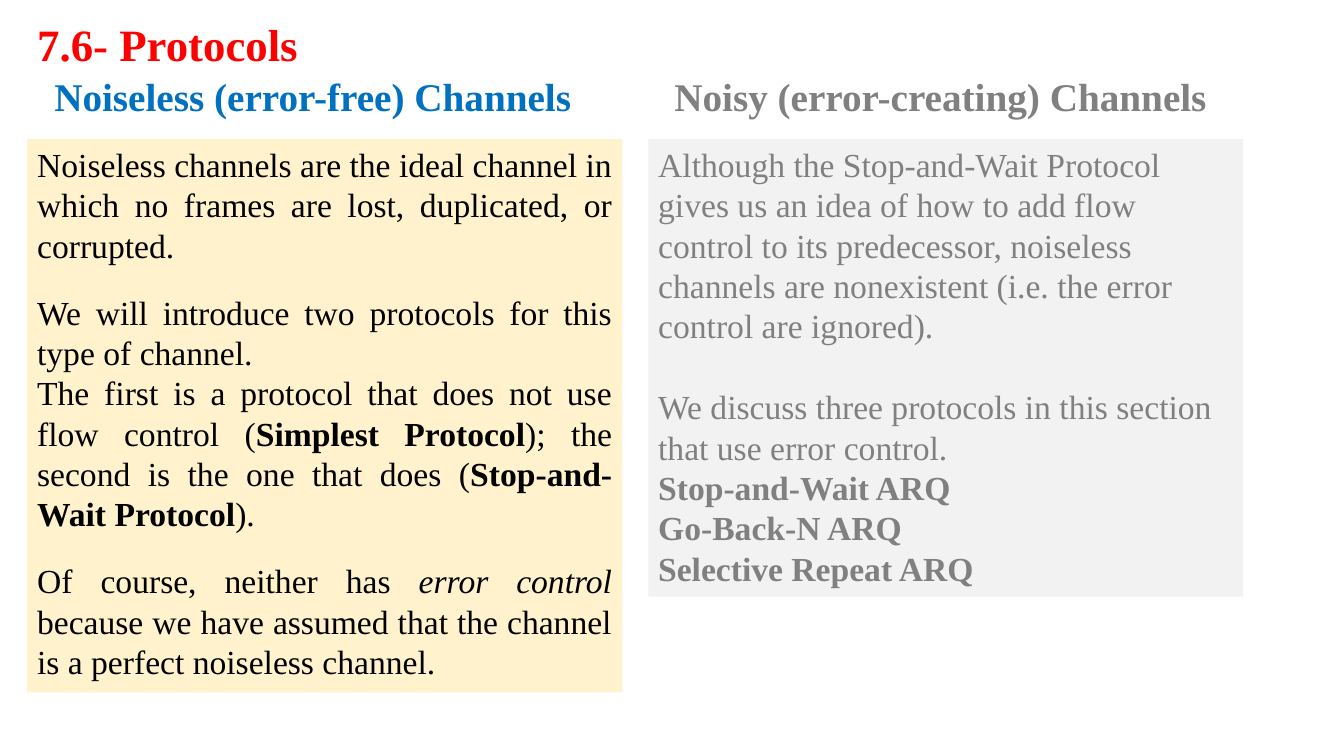
from dataclasses import dataclass

from pptx import Presentation
from pptx import util as u
from pptx.dml.color import RGBColor
from pptx.enum import shapes, text

PX = 9144  # EMU per px, 100 px to the inch
FONT = "Times New Roman"
RED = RGBColor(0xFF, 0x00, 0x00)
BLUE = RGBColor(0x00, 0x70, 0xC0)
BLACK = RGBColor(0x00, 0x00, 0x00)
GRAY = RGBColor(0x80, 0x80, 0x80)
CREAM = RGBColor(0xFF, 0xF2, 0xCC)
PALE = RGBColor(0xF2, 0xF2, 0xF2)
JUST = text.PP_ALIGN.JUSTIFY
LEFT = text.PP_ALIGN.LEFT


@dataclass
class Run:
    words: str
    bold: bool = False
    ital: bool = False


@dataclass
class Para:
    runs: list[Run]
    gap: int = 0
    lead: float = 1.0


@dataclass
class Box:
    left: int
    top: int
    width: int
    height: int
    size: int
    color: RGBColor
    paras: list[Para]
    align: text.PP_ALIGN = JUST
    fill: RGBColor | None = None


def head(words: str, lead: float = 1.0) -> list[Para]:
    return [Para([Run(words, bold=True)], lead=lead)]


IDEAL = [
    Para([Run("Noiseless channels are the ideal channel in which no frames "
              "are lost, duplicated, or corrupted.")]),
    Para([Run("We will introduce two protocols for this type of channel.")], gap=19),
    Para([
        Run("The first is a protocol that does not use flow control ("),
        Run("Simplest Protocol", bold=True),
        Run("); the second is the one that does ("),
        Run("Stop-and-Wait Protocol", bold=True),
        Run(")."),
    ]),
    Para([
        Run("Of course, neither has "),
        Run("error control ", ital=True),
        Run("because we have assumed that the channel is a perfect "
            "noiseless channel."),
    ], gap=19),
]
NOISY = [
    Para([Run("Although the Stop-and-Wait Protocol gives us an idea of how to "
              "add flow control to its predecessor, noiseless channels are "
              "nonexistent (i.e. the error control are ignored).")]),
    Para([Run("We discuss three protocols in this section that use error "
              "control.")], gap=29),
    *(Para([Run(name + " ARQ", bold=True)])
      for name in ("Stop-and-Wait", "Go-Back-N", "Selective Repeat")),
]
BOXES = [
    Box(27, -15, 1239, 82, 32, RED, head("7.6- Protocols", 1.5)),
    Box(44, 67, 557, 57, 28, BLUE, head("Noiseless (error-free) Channels")),
    Box(659, 67, 558, 57, 28, GRAY, head("Noisy (error-creating) Channels")),
    Box(27, 138, 590, 549, 24, BLACK, IDEAL, fill=CREAM),
    Box(643, 138, 590, 454, 24, GRAY, NOISY, LEFT, PALE),
]


def draw(slide, box: Box) -> None:
    area = [n * PX for n in (box.left, box.top, box.width, box.height)]
    if box.fill is None:
        shape = slide.shapes.add_textbox(*area)
    else:
        shape = slide.shapes.add_shape(shapes.MSO_SHAPE.RECTANGLE, *area)
        shape.shadow.inherit = False
        shape.fill.solid()
        shape.fill.fore_color.rgb = box.fill
        shape.line.fill.background()
    frame = shape.text_frame
    frame.word_wrap = True
    frame.auto_size = text.MSO_AUTO_SIZE.SHAPE_TO_FIT_TEXT
    frame.vertical_anchor = text.MSO_ANCHOR.TOP
    for i, item in enumerate(box.paras):
        para = frame.add_paragraph() if i else frame.paragraphs[0]
        para.alignment = box.align
        para.line_spacing = item.lead
        para.space_before = u.Pt(item.gap)
        for part in item.runs:
            run = para.add_run()
            run.text = part.words
            font = run.font
            font.name, font.size = FONT, u.Pt(box.size)
            font.bold, font.italic = part.bold, part.ital
            font.color.rgb = box.color


def main() -> None:
    deck = Presentation()
    deck.slide_width, deck.slide_height = 1333 * PX, 750 * PX
    slide = deck.slides.add_slide(deck.slide_layouts[6])
    for box in BOXES:
        draw(slide, box)
    deck.save("out.pptx")


if __name__ == "__main__":
    main()
